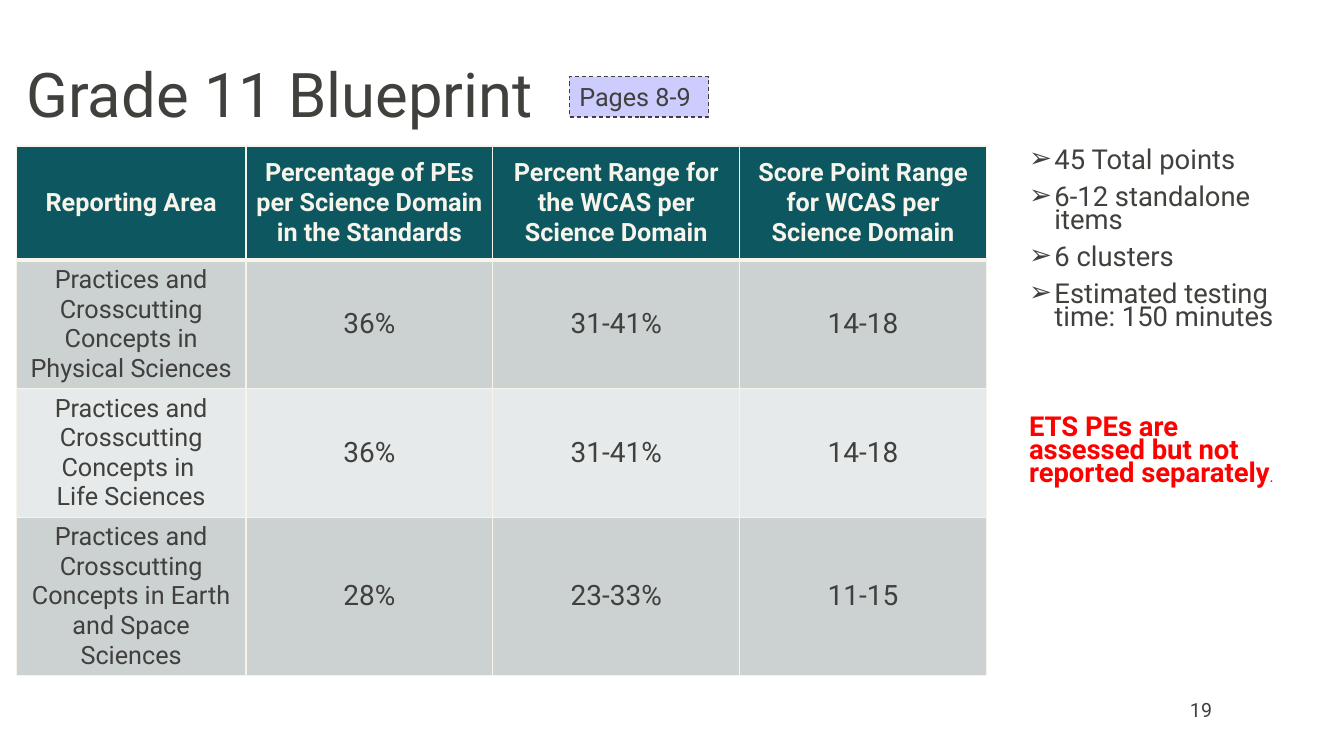
from lxml import etree
from pptx import Presentation
from pptx.dml.color import RGBColor
from pptx.enum.dml import MSO_LINE
from pptx.enum.shapes import MSO_SHAPE
from pptx.enum.text import MSO_ANCHOR, MSO_AUTO_SIZE, PP_ALIGN
from pptx.oxml.ns import qn
from pptx.util import Cm, Pt

LEFT, CENTER = PP_ALIGN.LEFT, PP_ALIGN.CENTER
TOP, MIDDLE = MSO_ANCHOR.TOP, MSO_ANCHOR.MIDDLE
NO_AUTOFIT = MSO_AUTO_SIZE.NONE
RECTANGLE, DASH = MSO_SHAPE.RECTANGLE, MSO_LINE.DASH

FONT = "Roboto"
INK = RGBColor(0x40, 0x40, 0x3D)
CREAM = RGBColor(0xF7, 0xF5, 0xEB)
TEAL = RGBColor(0x0D, 0x57, 0x61)
GRAY = RGBColor(0xCC, 0xD1, 0xD2)
LIGHT_GRAY = RGBColor(0xE7, 0xEA, 0xEA)
LAVENDER = RGBColor(0xCC, 0xCC, 0xFF)
RED = RGBColor(0xFF, 0x00, 0x00)

# Content
TITLE = "Grade 11 Blueprint"
PAGES = "Pages 8-9"
PAGE_NUMBER = "19"
BLUEPRINT = [
    ("Reporting Area", "Percentage of PEs per Science Domain in the Standards",
     "Percent Range for the WCAS per Science Domain",
     "Score Point Range for WCAS per Science Domain"),
    ("Practices and Crosscutting Concepts in Physical Sciences", "36%", "31-41%", "14-18"),
    ("Practices and Crosscutting Concepts in \vLife Sciences", "36%", "31-41%", "14-18"),
    ("Practices and Crosscutting Concepts in Earth and Space Sciences",
     "28%", "23-33%", "11-15"),
]
COLUMN_WIDTHS = [5.79, 6.22, 6.22, 6.22]
ROW_HEIGHTS = [2.87, 3.23, 3.23, 3.99]
FACTS = ["45 Total points", "6-12 standalone items", "6 clusters",
         "Estimated testing time: 150 minutes"]
NOTE = [("ETS PEs are assessed but not reported separately", 19.6), (".", 8.4)]


def place(shape, left, top, width, height):
    shape.left, shape.top = Cm(left), Cm(top)
    shape.width, shape.height = Cm(width), Cm(height)


def style(paragraph, size, color=INK, bold=False, align=LEFT):
    paragraph.alignment = align
    font = paragraph.font
    font.name, font.size, font.bold = FONT, Pt(size), bold
    font.color.rgb = color


def set_bullet(paragraph, character=None):
    properties = paragraph._p.get_or_add_pPr()
    indent = Cm(0.64) if character else 0
    properties.set("marL", str(indent))
    properties.set("indent", str(-indent))
    if character:
        etree.SubElement(properties, qn("a:buChar")).set("char", character)
    else:
        etree.SubElement(properties, qn("a:buNone"))


def set_borders(cell, widths):
    properties = cell._tc.get_or_add_tcPr()
    for position, (side, width) in enumerate(widths.items()):
        line = etree.Element(qn(f"a:ln{side}"), w=str(Pt(width)))
        fill = etree.SubElement(line, qn("a:solidFill"))
        etree.SubElement(fill, qn("a:srgbClr")).set("val", str(CREAM))
        properties.insert(position, line)


presentation = Presentation()
presentation.slide_width, presentation.slide_height = Cm(33.87), Cm(19.05)
slide = presentation.slides.add_slide(presentation.slide_layouts[1])

# Title
title = slide.shapes.title
place(title, 0.41, 0.61, 29.21, 3.68)
title.text_frame.text = TITLE
title.text_frame.vertical_anchor = MIDDLE
title.text_frame.auto_size = NO_AUTOFIT
title.text_frame.paragraphs[0].line_spacing = 0.9
style(title.text_frame.paragraphs[0], 44)

# Blueprint table
table = slide.shapes.add_table(
    len(BLUEPRINT), len(COLUMN_WIDTHS), Cm(0.41), Cm(3.68),
    Cm(sum(COLUMN_WIDTHS)), Cm(sum(ROW_HEIGHTS))).table
for column, width in zip(table.columns, COLUMN_WIDTHS):
    column.width = Cm(width)
for row, height in zip(table.rows, ROW_HEIGHTS):
    row.height = Cm(height)
for row_index, texts in enumerate(BLUEPRINT):
    header = row_index == 0
    for column_index, text in enumerate(texts):
        cell = table.cell(row_index, column_index)
        cell.text = text
        cell.vertical_anchor = MIDDLE
        cell.margin_left = cell.margin_right = Cm(0.18)
        cell.margin_top = cell.margin_bottom = Cm(0.13)
        cell.fill.solid()
        cell.fill.fore_color.rgb = TEAL if header else GRAY if row_index % 2 else LIGHT_GRAY
        set_borders(cell, {"L": 1, "R": 1, "T": 3 if row_index == 1 else 1,
                           "B": 3 if header else 1})
        size = 18 if header or column_index == 0 else 20
        for paragraph in cell.text_frame.paragraphs:
            style(paragraph, size, CREAM if header else INK, header, CENTER)

# Test facts and note
body = slide.placeholders[1]
place(body, 25.68, 3.68, 6.68, 11.15)
frame = body.text_frame
frame.text = "\n".join(FACTS)
frame.vertical_anchor = TOP
frame.auto_size = NO_AUTOFIT
for index, paragraph in enumerate(frame.paragraphs):
    set_bullet(paragraph, "➢")
    paragraph.line_spacing = 0.7
    paragraph.space_before = Pt(10 if index else 0)
    style(paragraph, 19.6)
note = frame.add_paragraph()
set_bullet(note)
note.line_spacing = 0.7
note.space_before = Pt(62)
style(note, 19.6, RED, True)
for text, size in NOTE:
    run = note.add_run()
    run.text = text
    run.font.size = Pt(size)

# Page reference tag
tag = slide.shapes.add_shape(RECTANGLE, Cm(14.35), Cm(1.93), Cm(3.51), Cm(1.02))
tag.shadow.inherit = False
tag.fill.solid()
tag.fill.fore_color.rgb = LAVENDER
tag.line.color.rgb = INK
tag.line.width = Pt(0.75)
tag.line.dash_style = DASH
tag.text_frame.text = PAGES
style(tag.text_frame.paragraphs[0], 18)

# Slide number
number = slide.shapes.add_textbox(Cm(29.74), Cm(17.37), Cm(1.78), Cm(1.02))
number.text_frame.word_wrap = True
number.text_frame.vertical_anchor = MIDDLE
number.text_frame.text = PAGE_NUMBER
style(number.text_frame.paragraphs[0], 14)

presentation.save("out.pptx")
